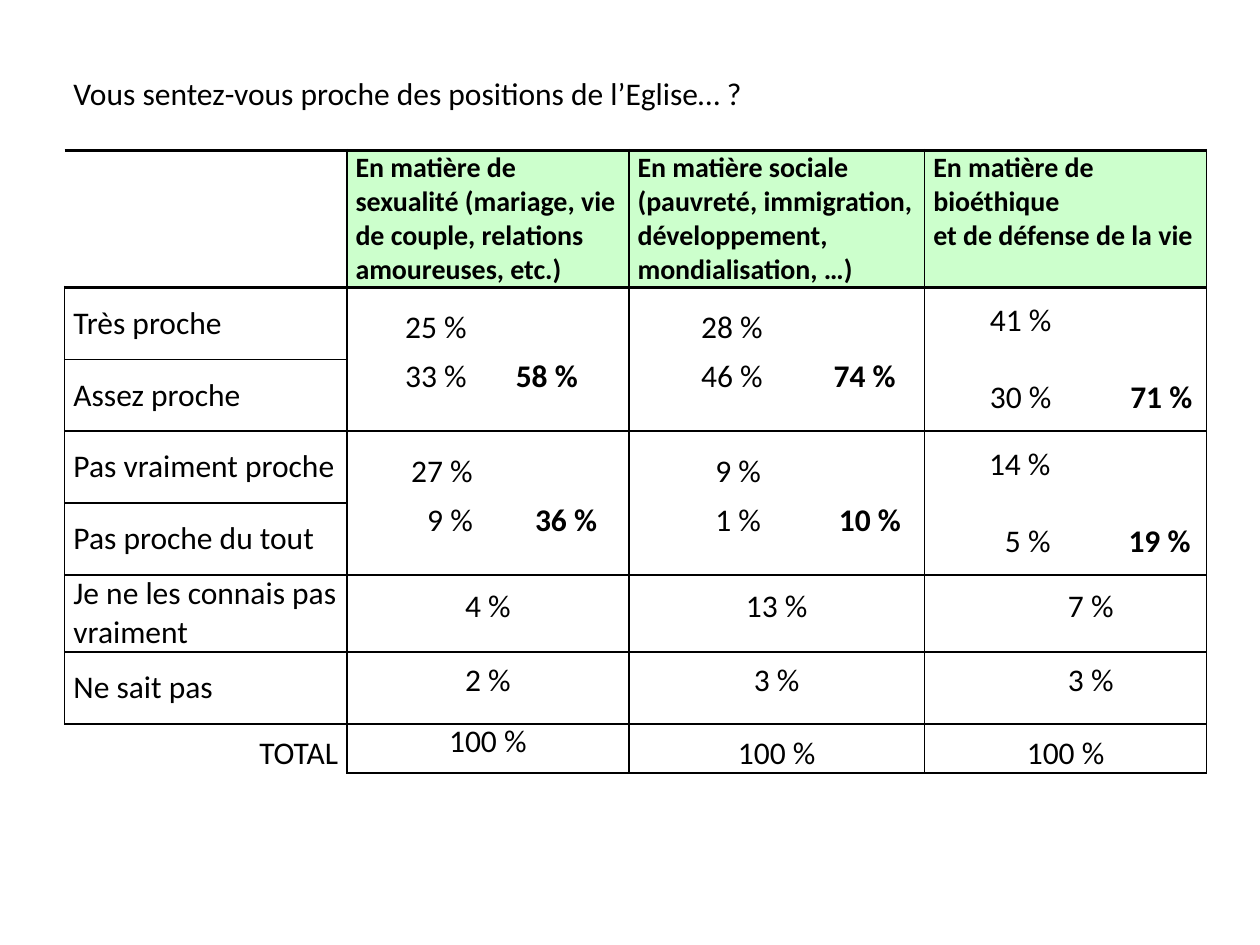
from lxml.etree import SubElement
from pptx import Presentation
from pptx.dml.color import RGBColor
from pptx.enum.text import MSO_ANCHOR as ANCHOR, PP_ALIGN as ALIGN
from pptx.oxml.ns import qn
from pptx.util import Pt

COLORS = {"ink": "000000", "header": "CCFFCC", "total": "FFFFFF"}
WIDTHS = [161.2, 161.2, 169, 161.2]
HEIGHTS = [42.8, 78.2, 41.1, 41.1, 41.1, 41.1, 44, 41.1, 27.7]
LINE = 14  # fixed line height of the figures


def write(cell, text, size=18, bold=False, align=ALIGN.LEFT, anchor=ANCHOR.MIDDLE,
          line=None, gap=0, tabs=(), top=0):
    """Fill a cell; a newline starts a paragraph, the part after "|" is bold."""
    cell.margin_left = cell.margin_right = Pt(5)
    cell.margin_top, cell.margin_bottom = Pt(top), Pt(0)
    cell.vertical_anchor = anchor
    tf = cell.text_frame
    for i, row_text in enumerate(text.split("\n")):
        p = tf.paragraphs[0] if i == 0 else tf.add_paragraph()
        p.alignment = align
        if line:
            p.line_spacing = Pt(line)
        if i and gap:
            p.space_before = Pt(gap)
        if tabs:
            tab_list = SubElement(p._p.get_or_add_pPr(), qn("a:tabLst"))
            for pos in tabs:
                SubElement(tab_list, qn("a:tab"), pos=str(Pt(pos)), algn="r")
        for j, part in enumerate(row_text.split("|")):
            r = p.add_run()
            r.text = part
            r.font.name, r.font.size = "Calibri", Pt(size)
            r.font.bold = bold or j > 0
            r.font.color.rgb = RGBColor.from_string(COLORS["ink"])


def set_borders(cell, **widths):
    """Draw the sides L, R, T and B in the given widths; 0 hides a side."""
    tc_pr = cell._tc.get_or_add_tcPr()
    for side in "LRTB":
        width = widths[side]
        ln = SubElement(tc_pr, qn(f"a:ln{side}"), w=str(Pt(width)))
        if width:
            fill = SubElement(ln, qn("a:solidFill"))
            SubElement(fill, qn("a:srgbClr"), val=COLORS["ink"])
        else:
            SubElement(ln, qn("a:noFill"))


prs = Presentation()
prs.slide_width, prs.slide_height = Pt(720), Pt(540)
s = prs.slides.add_slide(prs.slide_layouts[6])
table = s.shapes.add_table(len(HEIGHTS), len(WIDTHS), Pt(37), Pt(43.2),
                           Pt(sum(WIDTHS)), Pt(sum(HEIGHTS))).table
table.first_row = table.horz_banding = False
for column, width in zip(table.columns, WIDTHS):
    column.width = Pt(width)
for row, height in zip(table.rows, HEIGHTS):
    row.height = Pt(height)

# Borders and fills
last = len(HEIGHTS) - 1
for y in range(len(HEIGHTS)):
    for x in range(len(WIDTHS)):
        cell = table.cell(y, x)
        open_left = x == 0 and y in (0, 1, last)
        set_borders(
            cell,
            L=0 if open_left or y == 0 else 1,
            R=0 if y == 0 and x < 3 else 1,
            T=0 if y == 0 else 2.25 if y in (1, 2) else 1,
            B=2.25 if y in (0, 1) else 0 if y == last and x == 0 else 1,
        )
        fill_name = {1: "header", last: "total"}.get(y) if x else None
        if fill_name:
            cell.fill.solid()
            cell.fill.fore_color.rgb = RGBColor.from_string(COLORS[fill_name])
        else:
            cell.fill.background()

# Title and column headings
table.cell(0, 0).merge(table.cell(0, 3))
write(table.cell(0, 0), "Vous sentez-vous proche des positions de l’Eglise… ?", anchor=ANCHOR.TOP)
headings = [
    "En matière de sexualité (mariage, vie de couple, relations amoureuses, etc.)",
    "En matière sociale (pauvreté, immigration, développement, mondialisation, …)",
    "En matière de\nbioéthique\net de défense de la vie",
]
for x, heading in enumerate(headings, 1):
    write(table.cell(1, x), heading, size=16, bold=True, anchor=ANCHOR.TOP)

# Row labels
labels = ["Très proche", "Assez proche", "Pas vraiment proche", "Pas proche du tout",
          "Je ne les connais pas vraiment", "Ne sait pas"]
for y, label in enumerate(labels, 2):
    write(table.cell(y, 0), label)
write(table.cell(last, 0), "TOTAL", align=ALIGN.RIGHT, line=LINE, top=LINE)

# Paired answers with their bold subtotal: first, second, subtotal, tab stops
pairs = {
    2: [(25, 33, 58, (63.5, 127)), (28, 46, 74, (71.5, 147.5)), (41, 30, 71, (67.5, 148))],
    4: [(27, 9, 36, (67, 138)), (9, 1, 10, (70.5, 150.5)), (14, 5, 19, (67, 147))],
}
for y, groups in pairs.items():
    for x, (first, second, subtotal, tabs) in enumerate(groups, 1):
        cell = table.cell(y, x)
        cell.merge(table.cell(y + 1, x))
        spacing = {"gap": 22} if x == 3 else {"line": LINE, "gap": LINE}
        write(cell, f"\t{first} %\n\t{second} %|\t{subtotal} %", tabs=tabs, **spacing)

# Single answers
for y, values in {6: (4, 13, 7), 7: (2, 3, 3)}.items():
    for x, value in enumerate(values, 1):
        if x == 3:
            write(table.cell(y, x), f"\t{value} %", line=LINE, tabs=(103,))
        else:
            write(table.cell(y, x), f"{value} %", line=LINE, align=ALIGN.CENTER)

# Totals
write(table.cell(last, 1), "100 %", line=LINE, align=ALIGN.CENTER)
for x in (2, 3):
    write(table.cell(last, x), "100 %", line=LINE, align=ALIGN.CENTER,
          anchor=ANCHOR.TOP, top=LINE)

prs.save("out.pptx")
